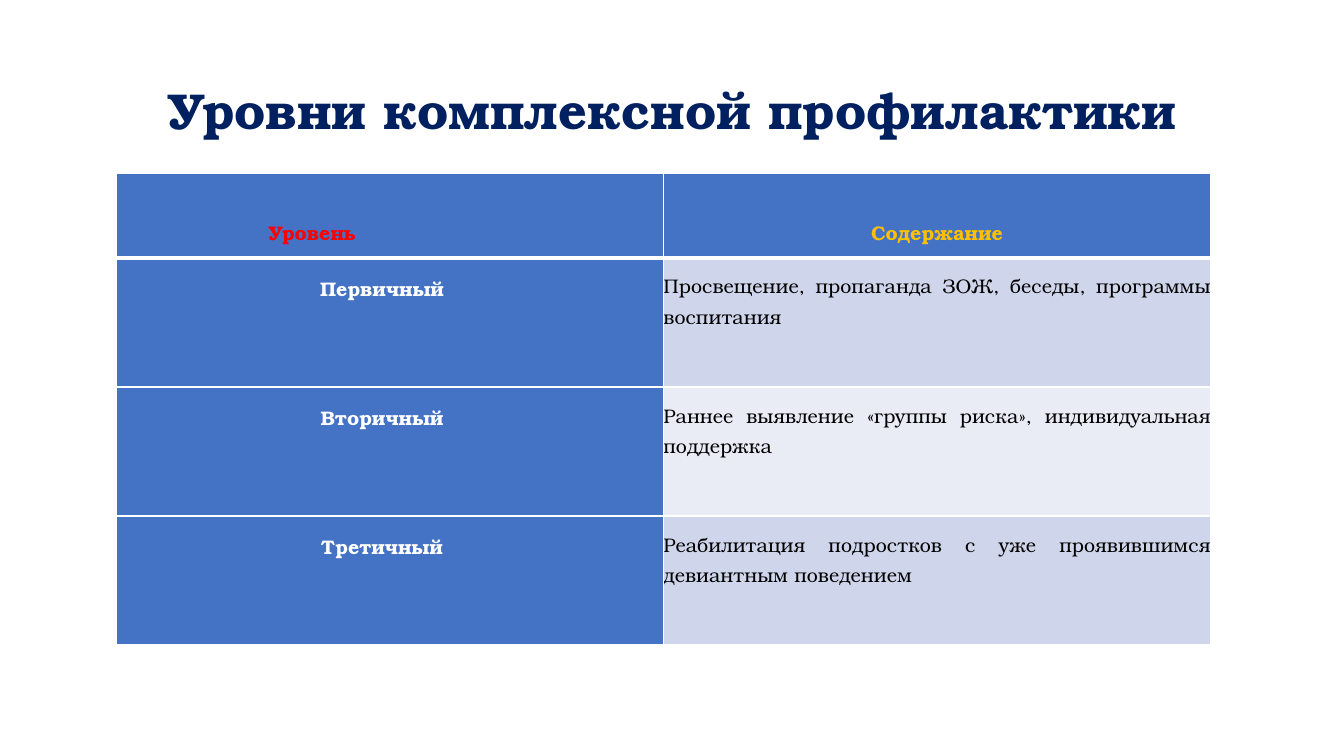
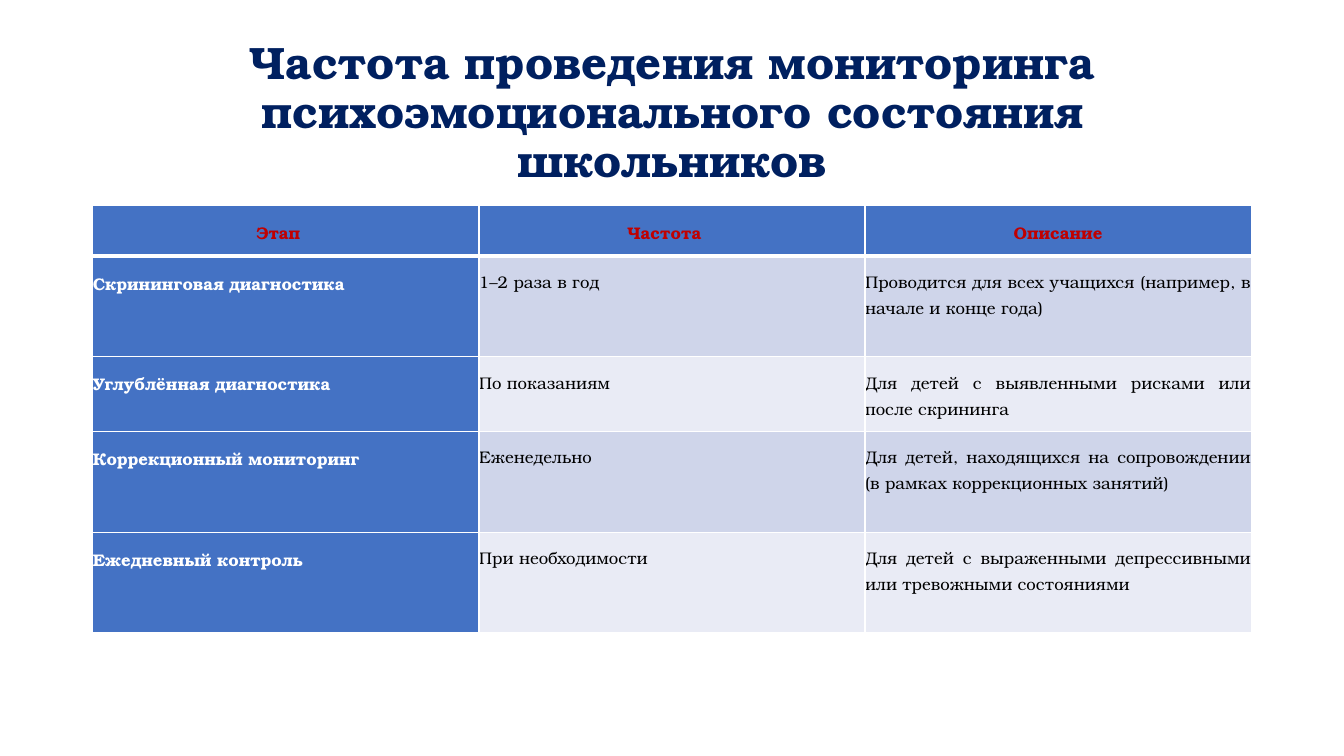
from dataclasses import dataclass

import pptx
import pptx.dml.color
import pptx.enum.text
import pptx.oxml
import pptx.oxml.ns
import pptx.presentation
import pptx.slide
import pptx.table
import pptx.util
from pptx.dml.color import RGBColor
from pptx.util import Inches

FONT = "TeX Gyre Bonum"
NAVY = RGBColor(0x00, 0x20, 0x60)
BLUE = RGBColor(0x44, 0x72, 0xC4)
BAND_DARK = RGBColor(0xCF, 0xD5, 0xEA)
BAND_LIGHT = RGBColor(0xE9, 0xEB, 0xF5)
WHITE = RGBColor(0xFF, 0xFF, 0xFF)
BLACK = RGBColor(0x00, 0x00, 0x00)
RED = RGBColor(0xFF, 0x00, 0x00)
GOLD = RGBColor(0xFF, 0xC0, 0x00)
DARK_RED = RGBColor(0xC0, 0x00, 0x00)

ALIGN = pptx.enum.text.PP_ALIGN
ANCHOR = pptx.enum.text.MSO_ANCHOR
TITLE_ONLY = 5
THIN, THICK = 1, 3
RIGHT_INSET = 0.15


@dataclass(frozen=True)
class Heading:
    text: str
    color: RGBColor
    right_inset: float = RIGHT_INSET


@dataclass(frozen=True)
class TableSlide:
    title: str
    title_size: float
    left: float
    top: float
    column_width: float
    row_heights: tuple[float, ...]
    text_size: float
    label_align: pptx.enum.text.PP_ALIGN
    headings: tuple[Heading, ...]
    rows: tuple[tuple[str, ...], ...]


SLIDES = (
    TableSlide(
        title="Уровни комплексной профилактики",
        title_size=36,
        left=1.15,
        top=1.72,
        column_width=5.43,
        row_heights=(0.84, 1.28, 1.28, 1.28),
        text_size=14,
        label_align=ALIGN.CENTER,
        headings=(
            Heading("Уровень", RED, right_inset=1.54),
            Heading("Содержание", GOLD, right_inset=0),
        ),
        rows=(
            ("Первичный", "Просвещение, пропаганда ЗОЖ, беседы, программы воспитания"),
            ("Вторичный", "Раннее выявление «группы риска», индивидуальная поддержка"),
            ("Третичный", "Реабилитация подростков с уже проявившимся девиантным поведением"),
        ),
    ),
    TableSlide(
        title="Частота проведения мониторинга психоэмоционального состояния школьников",
        title_size=32.4,
        left=0.92,
        top=2.04,
        column_width=3.83,
        row_heights=(0.49, 1, 0.74, 1, 1),
        text_size=12,
        label_align=ALIGN.JUSTIFY,
        headings=(
            Heading("Этап", DARK_RED),
            Heading("Частота", DARK_RED),
            Heading("Описание", DARK_RED, right_inset=0),
        ),
        rows=(
            ("Скрининговая диагностика", "1–2 раза в год",
             "Проводится для всех учащихся (например, в начале и конце года)"),
            ("Углублённая диагностика", "По показаниям",
             "Для детей с выявленными рисками или после скрининга"),
            ("Коррекционный мониторинг", "Еженедельно",
             "Для детей, находящихся на сопровождении (в рамках коррекционных занятий)"),
            ("Ежедневный контроль", "При необходимости",
             "Для детей с выраженными депрессивными или тревожными состояниями"),
        ),
    ),
)


def set_font(paragraph, size: float, color: RGBColor, bold: bool) -> None:
    font = paragraph.font
    font.name = FONT
    font.size = pptx.util.Pt(size)
    font.bold = bold
    font.color.rgb = color


def add_title(slide: pptx.slide.Slide, text: str, size: float) -> None:
    title = slide.shapes.title
    title.left, title.top = Inches(0.92), Inches(0.4)
    title.width, title.height = Inches(11.5), Inches(1.45)
    frame = title.text_frame
    frame.text = text
    frame.word_wrap = True
    frame.auto_size = pptx.enum.text.MSO_AUTO_SIZE.NONE
    frame.vertical_anchor = ANCHOR.MIDDLE
    paragraph = frame.paragraphs[0]
    paragraph.alignment = ALIGN.CENTER
    paragraph.line_spacing = 0.9
    set_font(paragraph, size, NAVY, True)


def set_borders(cell: pptx.table._Cell, top: float, bottom: float) -> None:
    properties = cell._tc.get_or_add_tcPr()
    for side, width in (("L", THIN), ("R", THIN), ("T", top), ("B", bottom)):
        properties.append(pptx.oxml.parse_xml(
            f'<a:ln{side} {pptx.oxml.ns.nsdecls("a")} w="{pptx.util.Pt(width)}">'
            f'<a:solidFill><a:srgbClr val="{WHITE}"/></a:solidFill></a:ln{side}>'
        ))


def fill_cell(cell: pptx.table._Cell, text: str, size: float, color: RGBColor,
              bold: bool, fill: RGBColor, align: pptx.enum.text.PP_ALIGN,
              anchor: pptx.enum.text.MSO_ANCHOR, right_inset: float) -> None:
    cell.text = text
    cell.vertical_anchor = anchor
    cell.margin_left, cell.margin_right = Inches(0), Inches(right_inset)
    cell.margin_top = cell.margin_bottom = Inches(0.11)
    cell.fill.solid()
    cell.fill.fore_color.rgb = fill
    paragraph = cell.text_frame.paragraphs[0]
    paragraph.alignment = align
    paragraph.line_spacing = 1.15
    paragraph.space_after = pptx.util.Pt(10)
    set_font(paragraph, size, color, bold)


def add_level_table(slide: pptx.slide.Slide, content: TableSlide) -> None:
    column_count = len(content.headings)
    table = slide.shapes.add_table(
        len(content.row_heights), column_count,
        Inches(content.left), Inches(content.top),
        Inches(content.column_width * column_count),
        Inches(sum(content.row_heights)),
    ).table
    for column in table.columns:
        column.width = Inches(content.column_width)
    for row, height in zip(table.rows, content.row_heights):
        row.height = Inches(height)

    # Header row
    for column_index, heading in enumerate(content.headings):
        cell = table.cell(0, column_index)
        set_borders(cell, THIN, THICK)
        fill_cell(cell, heading.text, content.text_size, heading.color, True, BLUE,
                  ALIGN.CENTER, ANCHOR.BOTTOM, heading.right_inset)

    # Label column and banded body
    for row_index, texts in enumerate(content.rows, start=1):
        band = BAND_DARK if row_index % 2 else BAND_LIGHT
        for column_index, text in enumerate(texts):
            is_label = column_index == 0
            is_last = column_index == column_count - 1
            cell = table.cell(row_index, column_index)
            set_borders(cell, THICK if row_index == 1 else THIN, THIN)
            fill_cell(cell, text, content.text_size,
                      WHITE if is_label else BLACK, is_label,
                      BLUE if is_label else band,
                      content.label_align if is_label else ALIGN.JUSTIFY,
                      ANCHOR.TOP, 0 if is_last else RIGHT_INSET)


def main() -> None:
    deck = pptx.Presentation()
    deck.slide_width, deck.slide_height = Inches(13.33), Inches(7.5)
    for content in SLIDES:
        slide = deck.slides.add_slide(deck.slide_layouts[TITLE_ONLY])
        add_title(slide, content.title, content.title_size)
        add_level_table(slide, content)
    deck.save("out.pptx")


if __name__ == "__main__":
    main()
